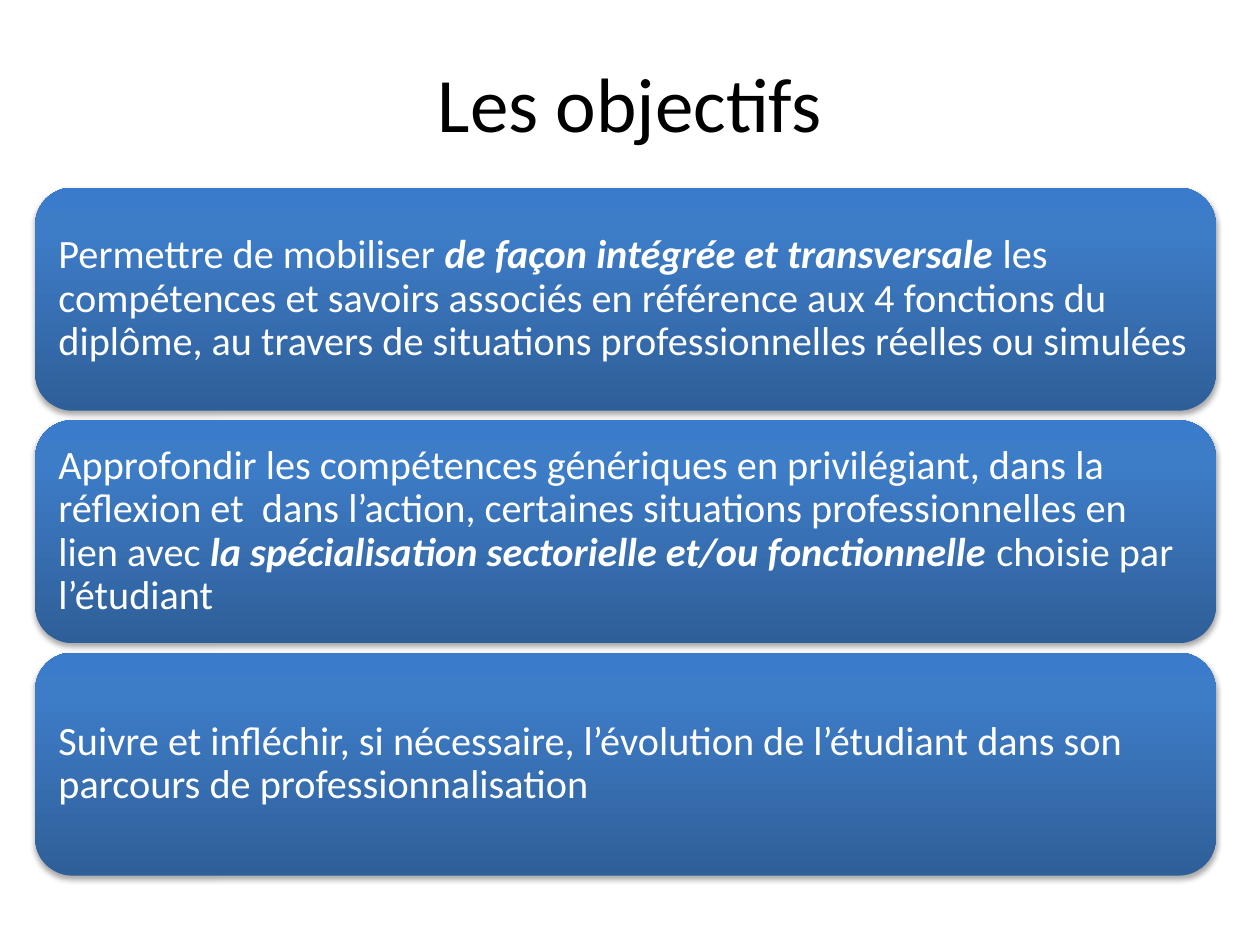
from dataclasses import dataclass

from lxml.etree import SubElement
from pptx import Presentation
from pptx.dml.color import RGBColor
from pptx.enum.shapes import MSO_SHAPE as Shape
from pptx.enum.text import MSO_ANCHOR as Anchor, PP_ALIGN as Align
from pptx.oxml.ns import qn
from pptx.util import Inches, Pt

TITLE = "Les objectifs"
# Each objective is a list of (text, emphasised) spans.
OBJECTIVES = [
    [
        ("Permettre de mobiliser ", False),
        ("de façon intégrée et transversale", True),
        (" les compétences et savoirs associés en référence aux 4 fonctions du "
         "diplôme, au travers de situations professionnelles réelles ou simulées", False),
    ],
    [
        ("Approfondir les compétences génériques en privilégiant, dans la réflexion et  "
         "dans l’action, certaines situations professionnelles en lien avec ", False),
        ("la spécialisation sectorielle et/ou fonctionnelle ", True),
        ("choisie par l’étudiant", False),
    ],
    [
        ("Suivre et infléchir, si nécessaire, l’évolution de l’étudiant dans son "
         "parcours de professionnalisation", False),
    ],
]


@dataclass(frozen=True)
class Theme:
    font: str = "Calibri"
    title_size: int = 44
    body_size: int = 23
    title_color: str = "000000"
    body_color: str = "FFFFFF"
    shadow_color: str = "000000"
    gradient: tuple = ((0, "2F5F99"), (80, "3D7CC7"), (100, "3A7CCB"))


THEME = Theme()
CARD_LEFT, CARD_TOP, CARD_WIDTH, CARD_HEIGHT = 0.28, 1.49, 9.37, 1.77
CARD_PITCH = 1.845


def add_span(para, text, size, color, emphasised=False):
    span = para.add_run()
    span.text = text
    font = span.font
    font.name, font.size = THEME.font, Pt(size)
    font.color.rgb = RGBColor.from_string(color)
    font.bold = font.italic = emphasised


def add_color(parent, color):
    return SubElement(parent, qn("a:srgbClr"), val=color)


def fill_gradient(shape):
    """Apply the theme gradient, running from bottom to top."""
    shape.fill.gradient()
    shape.fill.gradient_angle = 90
    stops = shape.element.spPr.find(".//" + qn("a:gsLst"))
    for stop in list(stops):
        stops.remove(stop)
    for percent, color in THEME.gradient:
        add_color(SubElement(stops, qn("a:gs"), pos=str(percent * 1000)), color)


def add_shadow(shape):
    """Drop a soft shadow straight down, at 35 % opacity."""
    shape.shadow.inherit = False
    effects = shape.element.spPr.find(qn("a:effectLst"))
    shadow = SubElement(effects, qn("a:outerShdw"), blurRad=str(Pt(3.1)),
                        dist=str(Pt(1.8)), dir=str(90 * 60000), rotWithShape="0")
    SubElement(add_color(shadow, THEME.shadow_color), qn("a:alpha"), val="35000")


def add_title(slide):
    box = slide.shapes.add_textbox(Inches(0.5), Inches(0.3), Inches(9), Inches(1.01))
    frame = box.text_frame
    frame.word_wrap = True
    frame.vertical_anchor = Anchor.MIDDLE
    para = frame.paragraphs[0]
    para.alignment = Align.CENTER
    add_span(para, TITLE, THEME.title_size, THEME.title_color)


def add_card(slide, top, spans):
    card = slide.shapes.add_shape(Shape.ROUNDED_RECTANGLE, Inches(CARD_LEFT), Inches(top),
                                  Inches(CARD_WIDTH), Inches(CARD_HEIGHT))
    fill_gradient(card)
    card.line.fill.background()
    add_shadow(card)
    frame = card.text_frame
    frame.word_wrap = True
    frame.vertical_anchor = Anchor.MIDDLE
    frame.margin_left = frame.margin_right = Inches(0.1)
    frame.margin_top = frame.margin_bottom = Inches(0.1)
    para = frame.paragraphs[0]
    para.alignment = Align.LEFT
    para.line_spacing = 0.9
    for text, emphasised in spans:
        add_span(para, text, THEME.body_size, THEME.body_color, emphasised)


def main():
    deck = Presentation()
    deck.slide_width, deck.slide_height = Inches(10), Inches(7.5)
    slide = deck.slides.add_slide(deck.slide_layouts[6])
    add_title(slide)
    for index, spans in enumerate(OBJECTIVES):
        add_card(slide, CARD_TOP + index * CARD_PITCH, spans)
    deck.save("out.pptx")


if __name__ == "__main__":
    main()
